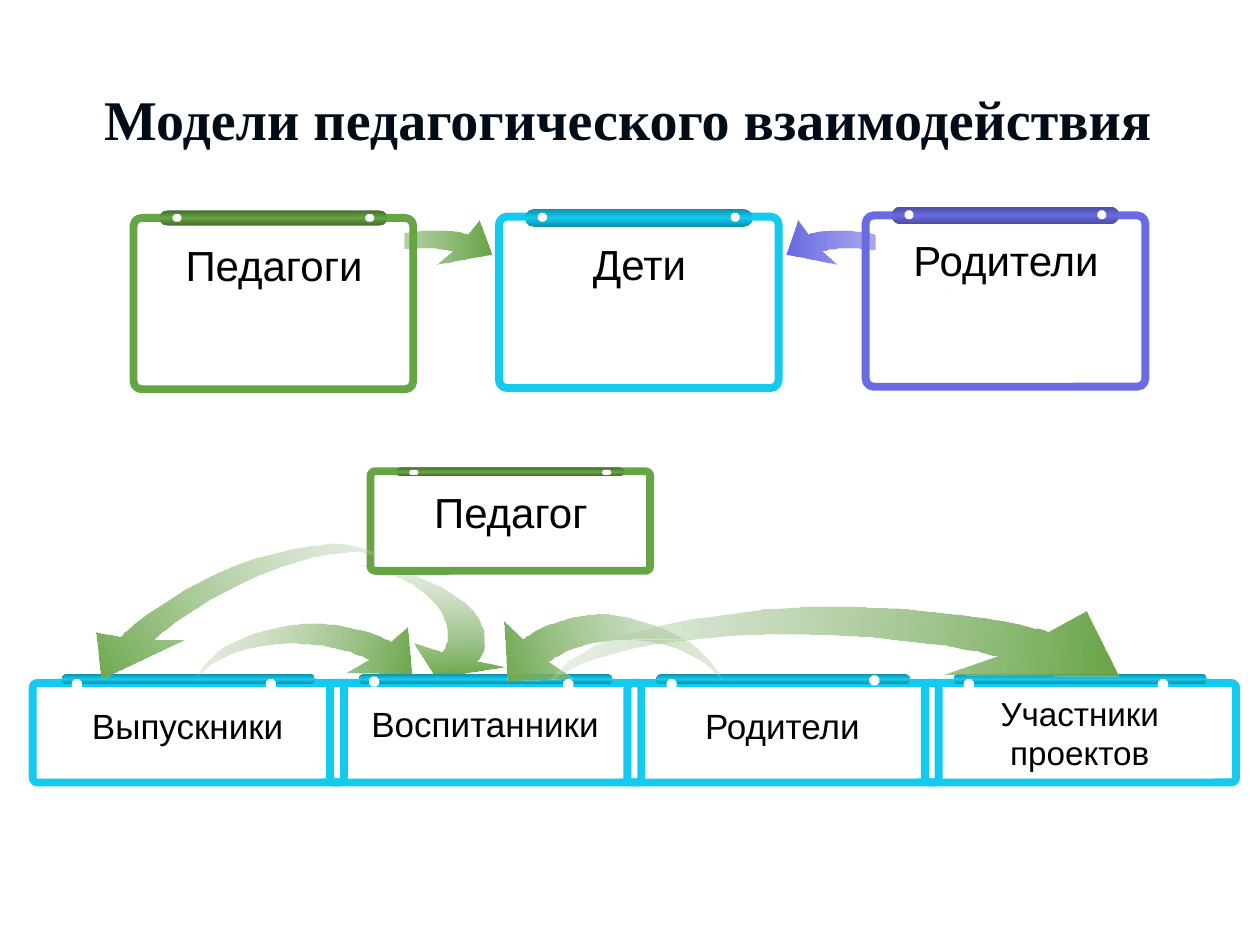
from lxml import etree
from pptx import Presentation
from pptx.dml.color import RGBColor
from pptx.enum.shapes import MSO_SHAPE
from pptx.enum.text import MSO_ANCHOR, MSO_AUTO_SIZE, PP_ALIGN
from pptx.oxml.ns import qn
from pptx.util import Inches, Pt

ROUNDED = MSO_SHAPE.ROUNDED_RECTANGLE
OCTAGON = MSO_SHAPE.OCTAGON
CENTER = PP_ALIGN.CENTER
MIDDLE = MSO_ANCHOR.MIDDLE
FIT_SHAPE = MSO_AUTO_SIZE.SHAPE_TO_FIT_TEXT

COLORS = {
    "title": "000C18", "text": "000000", "white": "FFFFFF",
    "green": "66A444", "green_dark": "446D2D", "green_pale": "BCD1B4",
    "cyan": "14CAEE", "cyan_dark": "0E90AA",
    "violet": "6A6AE2", "violet_dark": "4C4CA2", "violet_pale": "8282E5",
}

# Curved arrow, from its tail along the inner edge, round the head and back
ARROW_SIZE = (142, 57)
ARROW = [
    (0, 57), (0.5, 56), (1, 55), (2.5, 53.5), (4.5, 51), (7, 48), (10.5, 45),
    (15, 42), (20, 38.5), (26.5, 35), (34, 32), (42, 29), (52, 26), (62, 24),
    (70, 23), (79, 22), (86, 22), (92, 22), (98, 22), (103, 23), (106, 23),
    (109, 24), (111, 24), (98, 35), (142, 27), (132, 0), (123, 11), (121, 10),
    (119, 10), (115, 9), (111, 8.5), (106, 8), (100, 8), (93, 8), (86, 8),
    (78, 9), (70, 10), (61, 12), (51, 15), (42, 19), (33, 23), (26, 27),
    (20, 31), (14, 35), (10, 39), (7, 43), (4, 47), (2.5, 50), (1, 53),
    (0.5, 55), (0, 56),
]

# Offsets from the left edge of a board's frame, and widths
NARROW = {"width": 2.22, "bar": (0.21, 1.8), "studs": (0.31, 1.84),
          "label": (0.08, 2.07), "size": 24}
WIDE = {"width": 2.47, "bar": (0.23, 2.01), "studs": (0.31, 1.85),
        "label": (0.08, 2.3), "size": 20}


def rgb(name):
    return RGBColor.from_string(COLORS[name])


def fill_gradient(shape, stops, angle):
    """Fill with stops given as (percent, colour name, percent of opacity)."""
    shape.fill.gradient()
    shape.fill.gradient_angle = angle
    stop_list = shape._element.spPr.find(qn("a:gradFill")).find(qn("a:gsLst"))
    for stop in list(stop_list):
        stop_list.remove(stop)
    for position, name, opacity in stops:
        stop = etree.SubElement(stop_list, qn("a:gs"), pos=str(position * 1000))
        color = etree.SubElement(stop, qn("a:srgbClr"), val=COLORS[name])
        if opacity < 100:
            etree.SubElement(color, qn("a:alpha"), val=str(opacity * 1000))


def add_plain_shape(page, kind, left, top, width, height):
    shape = page.shapes.add_shape(
        kind, Inches(left), Inches(top), Inches(width), Inches(height))
    shape.shadow.inherit = False
    shape.line.fill.background()
    return shape


def add_text(frame, text, **format_values):
    para = frame.paragraphs[0]
    para.alignment = CENTER
    span = para.add_run()
    span.text = text
    color = format_values.pop("color")
    for name, value in format_values.items():
        setattr(span.font, name, value)
    span.font.color.rgb = rgb(color)


def add_title(page, text):
    title = page.shapes.title
    box = {"left": 0.26, "top": 0.56, "width": 9.45, "height": 0.75}
    for name, value in box.items():
        setattr(title, name, Inches(value))
    title.text_frame.vertical_anchor = MIDDLE
    add_text(title.text_frame, text, name="Times New Roman", size=Pt(32),
             bold=True, color="title")


def add_arrow(page, left, top, width, height, rotation=0, flip=None, color="green"):
    """Curved arrow fading towards its tail; flip is flipH or flipV."""
    scale = [Inches(length) / units for length, units in zip((width, height), ARROW_SIZE)]
    points = [(x * scale[0], y * scale[1]) for x, y in ARROW]
    builder = page.shapes.build_freeform(*points[0])
    builder.add_line_segments(points[1:], close=True)
    arrow = builder.convert_to_shape(Inches(left), Inches(top))
    arrow.shadow.inherit = False
    arrow.line.fill.background()
    arrow.rotation = rotation
    if flip:
        arrow._element.spPr.find(qn("a:xfrm")).set(flip, "1")
    fill_gradient(arrow, [(0, color + "_pale", 32), (100, color, 100)], 0)


def add_board(page, style, text, left, top, height, color, bar, studs,
              label, label_height, solid=False, size=None):
    """Framed board; bar, each stud and label give the drop from the frame's top."""
    frame = add_plain_shape(page, ROUNDED, left, top, style["width"], height)
    frame.adjustments[0] = 0.047
    frame.fill.background()
    frame.line.color.rgb = rgb(color)
    frame.line.width = Pt(4.5)

    bar_drop, bar_height = bar
    offset, width = style["bar"]
    rail = add_plain_shape(page, ROUNDED, left + offset, top + bar_drop, width, bar_height)
    rail.adjustments[0] = 0.5
    dark = color + "_dark"
    fill_gradient(rail, [(0, dark, 100), (50, color, 100), (100, dark, 100)], 270)

    stud_drops, stud_width, stud_height = studs
    for offset, drop in zip(style["studs"], stud_drops):
        stud = add_plain_shape(page, OCTAGON, left + offset, top + drop,
                               stud_width, stud_height)
        stud.fill.solid()
        stud.fill.fore_color.rgb = rgb("white")

    offset, width = style["label"]
    box = page.shapes.add_textbox(Inches(left + offset), Inches(top + label),
                                  Inches(width), Inches(label_height))
    if solid:
        box.fill.solid()
        box.fill.fore_color.rgb = rgb("white")
    box.text_frame.word_wrap = True
    box.text_frame.auto_size = FIT_SHAPE
    add_text(box.text_frame, text, name="Arial", size=Pt(size or style["size"]),
             color="text")


def add_mutual_model(page):
    add_arrow(page, 6.24, 1.75, 1.31, 0.57, flip="flipH", color="violet")
    add_arrow(page, 2.48, 1.75, 1.42, 0.57)
    boards = [
        ("Дети", 3.96, 1.72, "cyan", (-0.06, 0.14), -0.03, 0.07, 0.12, False),
        ("Родители", 6.87, 1.71, "violet", (-0.07, 0.14), -0.04, 0.07, 0.1, True),
        ("Педагоги", 1.06, 1.73, "green", (-0.06, 0.12), -0.03, 0.06, 0.12, True),
    ]
    for text, left, top, color, bar, drop, stud_height, label, solid in boards:
        add_board(page, NARROW, text, left, top, 1.36, color, bar,
                  ((drop, drop), 0.07, stud_height), label, 0.5, solid)


def add_teacher_model(page):
    add_arrow(page, 2.95, 4.33, 0.92, 1.18, 87.9)
    add_board(page, NARROW, "Педагог", 2.94, 3.74, 0.79, "green", (-0.03, 0.07),
              ((-0.01, -0.01), 0.07, 0.04), 0.07, 0.5, solid=True)
    groups = [
        ("Выпускники", (-0.03, -0.03), 1.85, 0.12, 0.43, 20),
        ("Воспитанники", (-0.05, -0.03), 1.85, 0.11, 0.43, 20),
        ("Родители", (-0.03, -0.06), 1.92, 0.12, 0.43, 20),
        ("Участники проектов", (-0.03, -0.03), 1.85, 0.03, 0.74, 19),
    ]
    for index, (text, drops, right_stud, label, label_height, size) in enumerate(groups):
        style = {**WIDE, "studs": (0.31, right_stud)}
        add_board(page, style, text, 0.26 + 2.36 * index, 5.42, 0.79, "cyan",
                  (-0.07, 0.08), (drops, 0.08, 0.08), label, label_height, size=size)
    add_arrow(page, 1.63, 4.82, 1.65, 0.74, 12.5)
    add_arrow(page, 4, 4.7, 1.62, 0.96, 342.5, "flipH")
    add_arrow(page, 0.63, 4.41, 2.36, 0.7, 147.3, "flipV")
    add_arrow(page, 4.42, 4.64, 4.47, 1.01, 6.3)


def main():
    deck = Presentation()
    deck.slide_width, deck.slide_height = Inches(10), Inches(7.5)
    page = deck.slides.add_slide(deck.slide_layouts[5])
    add_title(page, "Модели педагогического взаимодействия")
    add_mutual_model(page)
    add_teacher_model(page)
    deck.save("out.pptx")


if __name__ == "__main__":
    main()
